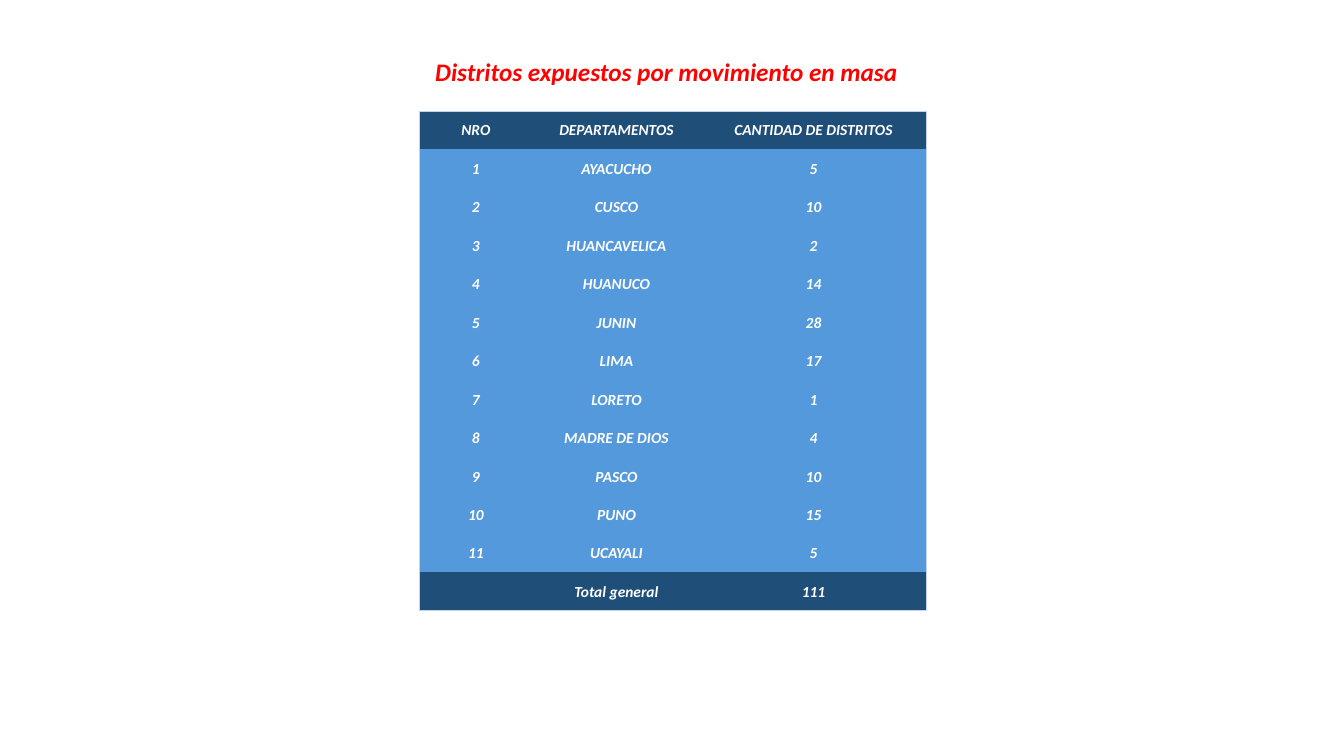
from pptx import Presentation
from pptx import util as u
from pptx.dml.color import RGBColor
from pptx.enum import text
from pptx.oxml.ns import qn
from lxml import etree

COLORS = {
    "title": "FF0000",
    "text": "FFFFFF",
    "band": "1F4E79",
    "body": "5499DB",
    "border": "C4D5EB",
}
HEADINGS = ("NRO", "DEPARTAMENTOS", "CANTIDAD DE DISTRITOS")
DISTRICTS = {
    "AYACUCHO": 5,
    "CUSCO": 10,
    "HUANCAVELICA": 2,
    "HUANUCO": 14,
    "JUNIN": 28,
    "LIMA": 17,
    "LORETO": 1,
    "MADRE DE DIOS": 4,
    "PASCO": 10,
    "PUNO": 15,
    "UCAYALI": 5,
}


class SlideBuilder:
    font = "Calibri"

    def __init__(self, slide):
        self.slide = slide

    def style(self, frame, size, color):
        """Centre the text and make it bold italic."""
        frame.vertical_anchor = text.MSO_ANCHOR.MIDDLE
        for paragraph in frame.paragraphs:
            paragraph.alignment = text.PP_ALIGN.CENTER
            for run in paragraph.runs:
                font = run.font
                font.name, font.size = self.font, u.Pt(size)
                font.bold = font.italic = True
                font.color.rgb = RGBColor.from_string(COLORS[color])

    def title(self, wording, left, top, width, height):
        box = self.slide.shapes.add_textbox(*map(u.Inches, (left, top, width, height)))
        box.text_frame.text = wording
        box.text_frame.word_wrap = False
        self.style(box.text_frame, 18, "title")

    def border(self, cell, side, visible):
        line = etree.SubElement(cell._tc.get_or_add_tcPr(), qn(f"a:ln{side}"))
        if not visible:
            etree.SubElement(line, qn("a:noFill"))
            return
        line.set("w", str(u.Pt(0.5)))
        fill = etree.SubElement(line, qn("a:solidFill"))
        etree.SubElement(fill, qn("a:srgbClr"), val=COLORS["border"])

    def cell(self, cell, wording, fill, outer_sides):
        cell.text = wording
        cell.margin_left = cell.margin_right = cell.margin_top = u.Inches(0.01)
        cell.margin_bottom = 0
        self.style(cell.text_frame, 11, "text")
        cell.vertical_anchor = text.MSO_ANCHOR.MIDDLE
        for side in "LRTB":
            self.border(cell, side, side in outer_sides)
        cell.fill.solid()
        cell.fill.fore_color.rgb = RGBColor.from_string(COLORS[fill])

    def table(self, rows, left, top, height, widths):
        """Draw rows with dark first and last bands and an outer border only."""
        last_row, last_column = len(rows) - 1, len(widths) - 1
        table = self.slide.shapes.add_table(
            len(rows), len(widths),
            *map(u.Inches, (left, top, sum(widths), height))).table
        table.horz_banding = False
        for column, width in zip(table.columns, widths):
            column.width = u.Inches(width)
        for r, row in enumerate(rows):
            fill = "band" if r in (0, last_row) else "body"
            for c, value in enumerate(row):
                edges = {"L": c == 0, "R": c == last_column,
                         "T": r == 0, "B": r == last_row}
                outer_sides = [side for side, outer in edges.items() if outer]
                self.cell(table.cell(r, c), str(value), fill, outer_sides)


def main():
    deck = Presentation()
    deck.slide_width, deck.slide_height = u.Inches(13.33), u.Inches(7.5)
    builder = SlideBuilder(deck.slides.add_slide(deck.slide_layouts[6]))
    builder.title("Distritos expuestos por movimiento en masa", 4.16, 0.51, 4.9, 0.4)
    departments = [(number, name, count) for number, (name, count)
                   in enumerate(DISTRICTS.items(), start=1)]
    total = ("", "Total general", sum(DISTRICTS.values()))
    builder.table([HEADINGS, *departments, total], 4.16, 1.1, 4.96, (1.12, 1.67, 2.24))
    deck.save("out.pptx")


if __name__ == "__main__":
    main()
